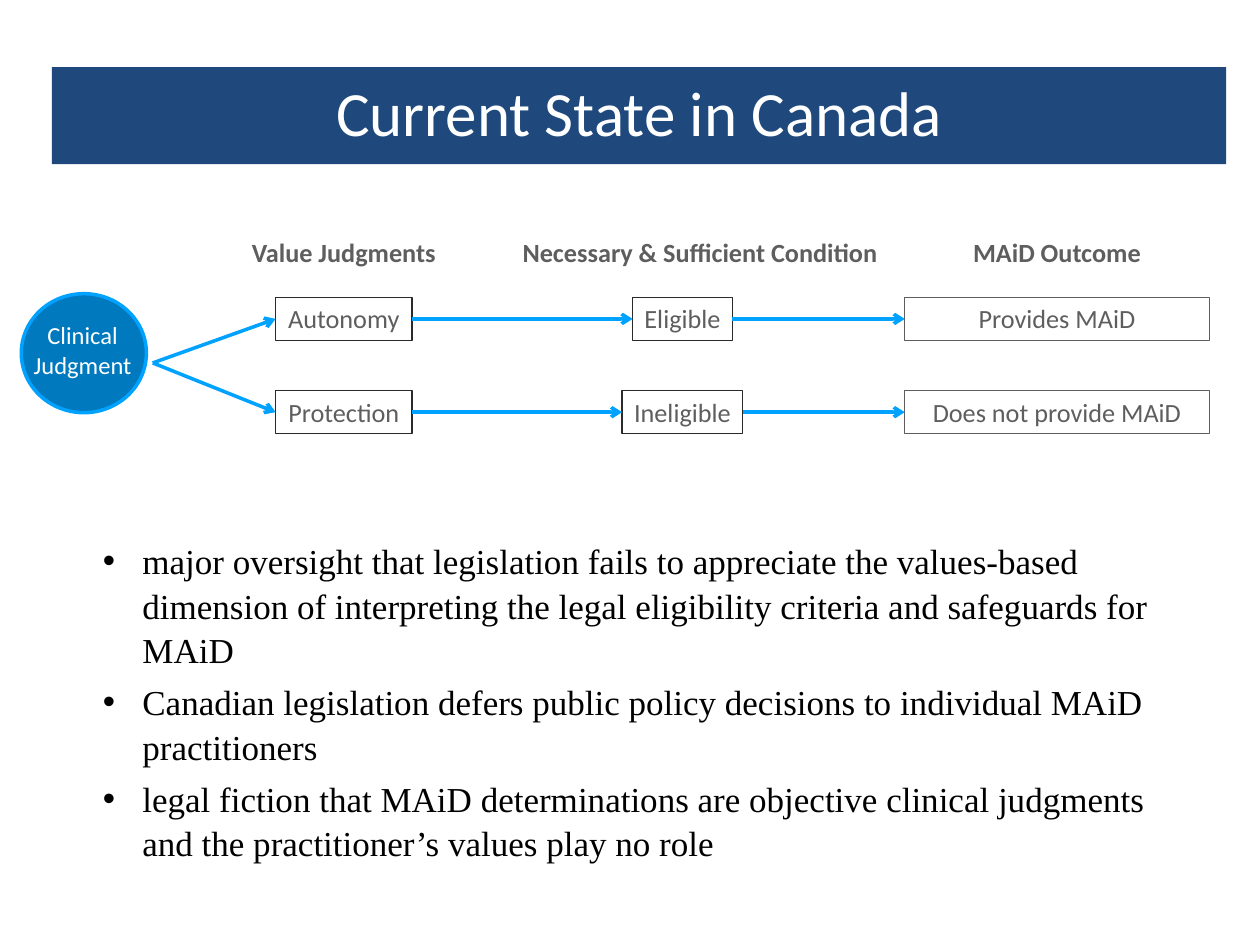
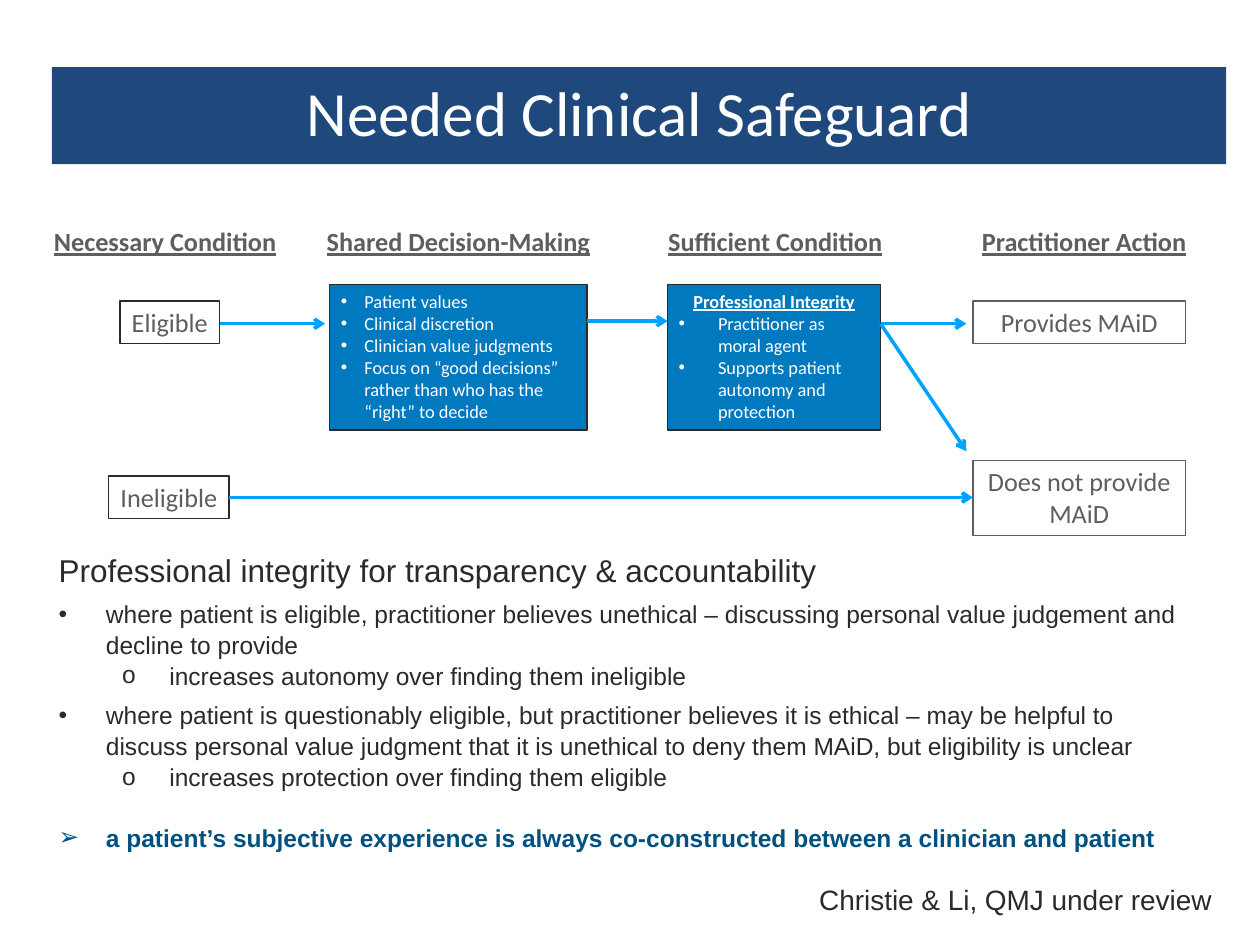
import pptx
import pptx.util
import pptx.dml.color
import pptx.enum.shapes
import pptx.enum.text
import pptx.oxml.ns
from lxml import etree

Pt = pptx.util.Pt
RGB = pptx.dml.color.RGBColor
SHAPE = pptx.enum.shapes.MSO_SHAPE
ALIGN = pptx.enum.text.PP_ALIGN
ANCHOR = pptx.enum.text.MSO_ANCHOR
qn = pptx.oxml.ns.qn

NAVY = RGB(0x1F, 0x49, 0x7D)
BLUE = RGB(0x00, 0x79, 0xBF)
SKY = RGB(0x00, 0xA2, 0xFF)
TEAL = RGB(0x00, 0x51, 0x80)
GREY = RGB(0x5E, 0x5E, 0x5E)
DARK = RGB(0x2A, 0x2A, 0x2A)
BLACK = RGB(0, 0, 0)
WHITE = RGB(255, 255, 255)

TITLE = dict(name="Calibri", size=36, color=WHITE)
LABEL = dict(name="Calibri", size=15, color=GREY)
HEADING = dict(LABEL, bold=True)
UNDERLINED = dict(HEADING, underline=True)
CIRCLE = dict(LABEL, size=14, color=WHITE)
DETAIL = dict(LABEL, size=10.5, color=WHITE)
DETAIL_HEAD = dict(DETAIL, bold=True, underline=True)
SERIF = dict(name="Times New Roman", size=20, color=BLACK)
LEAD = dict(name="Arial", size=18, color=DARK)
POINT = dict(LEAD, size=14)
CONCLUSION = dict(POINT, color=TEAL, bold=True)
SOURCE = dict(LEAD, size=16)

LABEL_INSETS = (6.3, 3)
BODY_SPACING = 1.05

STATE_HEADINGS = [
    ("Value Judgments", 196.5, 122),
    ("Necessary & Sufficient Condition", 400, 279),
    ("MAiD Outcome", 604, 122),
]
STATE_CENTERS = [196.5, 390, 604]
STATE_ROWS = [
    (170, [("Autonomy", 78), ("Eligible", 57), ("Provides MAiD", 174)]),
    (223.3, [("Protection", 78), ("Ineligible", 69), ("Does not provide MAiD", 174)]),
]
STATE_POINTS = [
    "major oversight that legislation fails to appreciate the values-based dimension of "
    "interpreting the legal eligibility criteria and safeguards for MAiD",
    "Canadian legislation defers public policy decisions to individual MAiD practitioners",
    "legal fiction that MAiD determinations are objective clinical judgments and the "
    "practitioner’s values play no role",
]

SAFEGUARD_HEADINGS = [
    ("Necessary Condition", 94.4, 141),
    ("Shared Decision-Making", 262, 168.5),
    ("Sufficient Condition", 443, 137),
    ("Practitioner Action", 619.5, 135),
]
SAFEGUARD_LABELS = [
    ("Eligible", (68.5, 172, 57, 24.5), DARK),
    ("Ineligible", (62, 272, 69, 24.5), DARK),
    ("Provides MAiD", (556, 172, 121.5, 24.5), GREY),
    ("Does not provide MAiD", (556, 263, 121.5, 43), GREY),
]
SHARED_BOX = (188.5, 162.7, 147, 83)
INTEGRITY_BOX = (381.5, 162.7, 121.7, 83)
SHARED_ITEMS = [
    "Patient values",
    "Clinical discretion",
    "Clinician value judgments",
    "Focus on “good decisions” rather than who has the “right” to decide",
]
INTEGRITY_ITEMS = [
    "Practitioner as moral agent",
    "Supports patient autonomy and protection",
]
SAFEGUARD_ARROWS = [
    ((125.5, 185), (185.8, 185)),
    ((335.5, 183.5), (381.5, 183.5)),
    ((503.2, 185), (552.2, 185)),
    ((503.2, 185), (552.2, 257.8)),
    ((131, 284.3), (556, 284.3)),
]
MAIN, SUB = (27, -27), (63.3, -27)
SAFEGUARD_POINTS = [
    ("Professional integrity for transparency & accountability", LEAD, dict(after=5)),
    ("where patient is eligible, practitioner believes unethical – discussing personal value "
     "judgement and decline to provide", POINT, dict(bullet="•", indent=MAIN)),
    ("increases autonomy over finding them ineligible", POINT,
     dict(bullet="o", indent=SUB, level=1, after=5)),
    ("where patient is questionably eligible, but practitioner believes it is ethical – may be "
     "helpful to discuss personal value judgment that it is unethical to deny them MAiD, but "
     "eligibility is unclear", POINT, dict(bullet="•", indent=MAIN)),
    ("increases protection over finding them eligible", POINT,
     dict(bullet="o", indent=SUB, level=1)),
    ("a patient’s subjective experience is always co-constructed between a clinician and patient",
     CONCLUSION, dict(bullet="➢", indent=MAIN, before=17)),
]


def format_paragraph(p, text, font, align=ALIGN.LEFT, bullet=None, indent=(0, 0), level=0,
                     before=0, after=0, spacing=None):
    values = dict(alignment=align, level=level, space_before=Pt(before),
                  space_after=Pt(after), line_spacing=spacing)
    for key, value in values.items():
        setattr(p, key, value)
    if bullet:
        pPr = p._p.get_or_add_pPr()
        pPr.set("marL", str(Pt(indent[0])))
        pPr.set("indent", str(Pt(indent[1])))
        etree.SubElement(pPr, qn("a:buFont")).set("typeface", "Arial")
        etree.SubElement(pPr, qn("a:buChar")).set("char", bullet)
    r = p.add_run()
    r.text = text
    for key, value in font.items():
        if key == "color":
            r.font.color.rgb = value
        else:
            setattr(r.font, key, Pt(value) if key == "size" else value)


def write(sp, paragraphs, insets=LABEL_INSETS, anchor=ANCHOR.TOP, wrap=True, **shared):
    tf = sp.text_frame
    side, top = (Pt(v) for v in insets)
    values = dict(margin_left=side, margin_right=side, margin_top=top, margin_bottom=top,
                  vertical_anchor=anchor, word_wrap=wrap)
    for key, value in values.items():
        setattr(tf, key, value)
    for i, (text, font, options) in enumerate(paragraphs):
        p = tf.add_paragraph() if i else tf.paragraphs[0]
        format_paragraph(p, text, font, **{**shared, **options})


def add_text(s, box, paragraphs, **options):
    write(s.shapes.add_textbox(*map(Pt, box)), paragraphs, **options)


def add_box(s, box, fill=None, line=None, width=0.75, kind=SHAPE.RECTANGLE):
    sp = s.shapes.add_shape(kind, *map(Pt, box))
    sp.shadow.inherit = False
    if fill is None:
        sp.fill.background()
    else:
        sp.fill.solid()
        sp.fill.fore_color.rgb = fill
    if line is None:
        sp.line.fill.background()
    else:
        sp.line.color.rgb = line
        sp.line.width = Pt(width)
    return sp


def add_label(s, text, box, line):
    write(add_box(s, box, line=line), [(text, LABEL, {})], align=ALIGN.CENTER,
          wrap=line == GREY)


def add_arrow(s, start, end):
    c = s.shapes.add_connector(pptx.enum.shapes.MSO_CONNECTOR.STRAIGHT,
                               *map(Pt, start + end))
    c.line.color.rgb = SKY
    c.line.width = Pt(2)
    etree.SubElement(c.line._get_or_add_ln(), qn("a:tailEnd")).set("type", "arrow")
    etree.SubElement(c._element.spPr, qn("a:effectLst"))


def add_headings(s, headings, top, font):
    for text, center, width in headings:
        add_text(s, (center - width / 2, top, width, 24.5), [(text, font, {})],
                 align=ALIGN.CENTER)


def new_slide(prs, title):
    s = prs.slides.add_slide(prs.slide_layouts[6])
    write(add_box(s, (29.7, 38.3, 671, 55.6), fill=NAVY), [(title, TITLE, {})],
          insets=(7.2, 7.2), anchor=ANCHOR.MIDDLE, align=ALIGN.CENTER, spacing=0.9)
    return s


def build_state(prs):
    s = new_slide(prs, "Current State in Canada")
    add_headings(s, STATE_HEADINGS, 132, HEADING)
    for top, labels in STATE_ROWS:
        middle = top + 12.25
        start = (87.3, 207.4)
        for i, (text, width) in enumerate(labels):
            left = STATE_CENTERS[i] - width / 2
            add_label(s, text, (left, top, width, 24.5), GREY if i == 2 else DARK)
            add_arrow(s, start, (left, middle))
            start = (left + width, middle)
    add_box(s, (12.2, 167.8, 71.5, 68), BLUE, SKY, 2, SHAPE.OVAL)
    add_text(s, (12.2, 180, 70, 40), [(t, CIRCLE, {}) for t in ("Clinical", "Judgment")],
             align=ALIGN.CENTER, wrap=False)
    add_text(s, (51.8, 303.8, 620, 187), [(t, SERIF, {}) for t in STATE_POINTS],
             insets=(7.2, 3.6), bullet="•", indent=(22.5, -22.5), after=5,
             spacing=BODY_SPACING)


def build_safeguard(prs):
    s = new_slide(prs, "Needed Clinical Safeguard")
    add_headings(s, SAFEGUARD_HEADINGS, 126, UNDERLINED)
    for label in SAFEGUARD_LABELS:
        add_label(s, *label)
    write(add_box(s, SHARED_BOX, BLUE, DARK), [(t, DETAIL, {}) for t in SHARED_ITEMS],
          bullet="•", indent=(13.5, -13.5))
    integrity = [("Professional Integrity", DETAIL_HEAD, dict(align=ALIGN.CENTER))]
    integrity += [(t, DETAIL, dict(bullet="•", indent=(22.5, -22.5))) for t in INTEGRITY_ITEMS]
    write(add_box(s, INTEGRITY_BOX, BLUE, DARK), integrity)
    for start, end in SAFEGUARD_ARROWS:
        add_arrow(s, start, end)
    add_text(s, (29.5, 312.5, 647, 175.7), SAFEGUARD_POINTS, insets=(4, 4),
             anchor=ANCHOR.MIDDLE, spacing=BODY_SPACING)
    add_text(s, (460.8, 500.4, 239, 27.4), [("Christie & Li, QMJ under review", SOURCE, {})],
             insets=(4, 4), anchor=ANCHOR.MIDDLE, align=ALIGN.CENTER, wrap=False)


def main():
    prs = pptx.Presentation()
    prs.slide_width, prs.slide_height = Pt(720), Pt(540)
    build_state(prs)
    build_safeguard(prs)
    prs.save("out.pptx")


if __name__ == "__main__":
    main()
